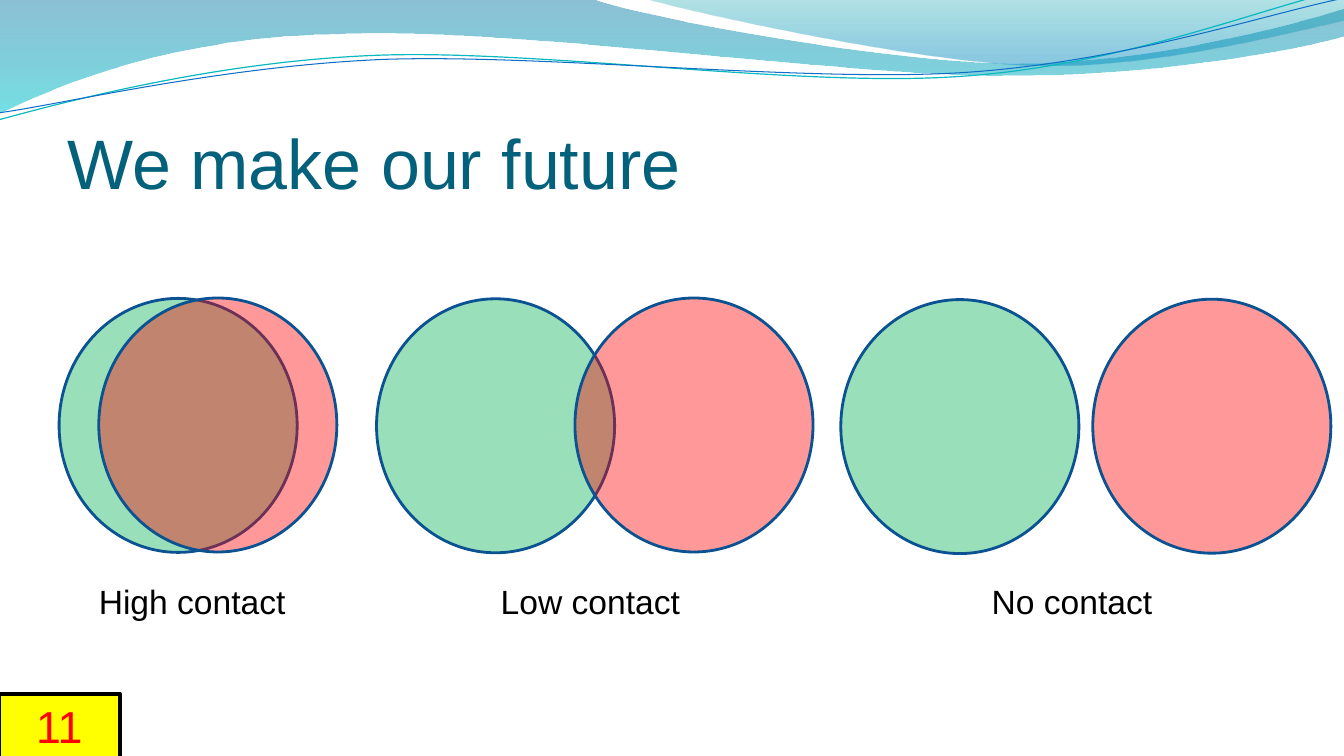
from lxml import etree
from pptx import Presentation
from pptx import util as u
from pptx.dml.color import RGBColor
from pptx.enum import shapes, text
from pptx.oxml.ns import qn

FONT = "Arial"
GREEN, RED, OUTLINE = "00B050", "FF0000", "0B5292"

BACK_WAVE = [
    (0, 0), (14.91, -0.03),
    (16.1, 0.43, 22.48, 1.6, 25.68, 1.6),
    (28.91, 1.6, 32.46, 0.66, 33.86, 0.23),
    (33.91, 0.91),
    (33.3, 1.12, 29.46, 1.93, 25.25, 1.91),
    (21.06, 1.91, 12.93, 0.71, 8.71, 0.86),
    (4.37, 0.91, 1.55, 2.11, -0.03, 2.87),
]
FRONT_WAVE = [
    (16.23, -0.03),
    (17.25, 0.28, 23.09, 1.57, 26.04, 1.65),
    (28.98, 1.75, 32.56, 0.81, 33.86, 0.53),
    (33.86, 0),
]
TEAL_LINE = [
    (-0.03, 3.02),
    (1.63, 2.57, 5.36, 1.57, 9.37, 1.4),
    (13.39, 1.22, 20.07, 2.21, 24.13, 1.93),
    (28.19, 1.68, 31.8, 0.2, 33.81, -0.25),
]
BLUE_LINE = [
    (0, 2.84),
    (1.6, 2.62, 5.54, 1.68, 9.6, 1.5),
    (13.64, 1.35, 20.22, 2.08, 24.26, 1.83),
    (28.32, 1.57, 31.88, 0.36, 33.88, -0.05),
]
CONTACTS = [
    ("High contact", 2.24, (1.49, 7.52), (2.49, 7.51)),
    ("Low contact", 12.37, (9.49, 7.53), (14.49, 7.51)),
    ("No contact", 24.74, (21.19, 7.55), (27.54, 7.54)),
]


def rgb(value):
    return RGBColor.from_string(value)


def box(*lengths):
    return [u.Cm(v) for v in lengths]


def set_alphas(sp, *alphas):
    for clr, alpha in zip(sp._element.spPr.iter(qn("a:srgbClr")), alphas):
        etree.SubElement(clr, qn("a:alpha")).set("val", str(alpha * 1000))


def set_line(sp, color, width):
    sp.line.color.rgb = rgb(color)
    sp.line.width = u.Pt(width)


def bend(sp, segments):
    edges = iter(list(sp._element.spPr.iter(qn("a:lnTo"))))
    for seg in segments[1:]:
        edge = next(edges)
        if len(seg) == 6:
            edge.tag = qn("a:cubicBezTo")
            for _ in range(2):
                extra = next(edges)
                edge.append(extra[0])
                extra.getparent().remove(extra)


def add_curve(s, segments, closed):
    start, *rest = [box(*seg[i:i + 2]) for seg in segments
                    for i in range(0, len(seg), 2)]
    builder = s.shapes.build_freeform(*start)
    builder.add_line_segments(rest, close=closed)
    sp = builder.convert_to_shape()
    sp.shadow.inherit = False
    bend(sp, segments)
    return sp


def add_wave(s, segments, stops):
    sp = add_curve(s, segments, True)
    sp.fill.gradient()
    sp.fill.gradient_angle = 270
    for stop, (position, color, _) in zip(sp.fill.gradient_stops, stops):
        stop.position = position
        stop.color.rgb = rgb(color)
    set_alphas(sp, *(alpha for _, _, alpha in stops))
    sp.line.fill.background()


def add_wave_line(s, segments, color, width):
    sp = add_curve(s, segments, False)
    sp.fill.background()
    set_line(sp, color, width)


def add_preset(s, kind, bounds, fill, line, width):
    sp = s.shapes.add_shape(kind, *box(*bounds))
    sp.shadow.inherit = False
    sp.fill.solid()
    sp.fill.fore_color.rgb = rgb(fill)
    set_line(sp, line, width)
    return sp


def add_circle(s, corner, color):
    sp = add_preset(s, shapes.MSO_SHAPE.OVAL, (*corner, 6, 6.4),
                    color, OUTLINE, 2)
    set_alphas(sp, 40)


def write(tf, content, size, color, align=None):
    tf.word_wrap = True
    p = tf.paragraphs[0]
    p.alignment = align
    r = p.add_run()
    r.text = content
    r.font.name = FONT
    r.font.size = u.Pt(size)
    r.font.color.rgb = rgb(color)


def add_label(s, content, left):
    sp = s.shapes.add_textbox(*box(left, 14.52, 6.27, 1.27))
    sp.text_frame.auto_size = text.MSO_AUTO_SIZE.SHAPE_TO_FIT_TEXT
    write(sp.text_frame, content, 24, "000000")


def add_title(s, content):
    sp = s.shapes.title
    sp._element.getparent().append(sp._element)
    sp.left, sp.top, sp.width, sp.height = box(1.7, 1.96, 30.76, 3.18)
    tf = sp.text_frame
    tf.auto_size = text.MSO_AUTO_SIZE.NONE
    tf.vertical_anchor = text.MSO_ANCHOR.BOTTOM
    tf.margin_left = tf.margin_right = tf.margin_bottom = 0
    tf.margin_top = u.Cm(0.13)
    write(tf, content, 50, "04617B", text.PP_ALIGN.LEFT)


def add_number(s, content):
    sp = add_preset(s, shapes.MSO_SHAPE.RECTANGLE, (-0.03, 17.48, 3.05, 1.63),
                    "FFFF00", "000000", 3)
    sp.text_frame.auto_size = text.MSO_AUTO_SIZE.SHAPE_TO_FIT_TEXT
    sp.text_frame.vertical_anchor = text.MSO_ANCHOR.TOP
    write(sp.text_frame, content, 32, RED, text.PP_ALIGN.CENTER)


def main():
    prs = Presentation()
    prs.slide_width, prs.slide_height = box(33.87, 19.05)
    s = prs.slides.add_slide(prs.slide_layouts[5])
    add_wave(s, BACK_WAVE, [(0, "0074A1", 45), (1, "00C6CF", 55)])
    add_wave(s, FRONT_WAVE, [(0, "00A1A9", 30), (0.8, "008BBF", 45)])
    add_wave_line(s, TEAL_LINE, "0AB8BF", 0.85)
    add_wave_line(s, BLUE_LINE, "0F6FC6", 0.75)
    add_title(s, "We make our future")
    for _, _, green_corner, red_corner in CONTACTS:
        add_circle(s, green_corner, GREEN)
        add_circle(s, red_corner, RED)
    for label, left, _, _ in CONTACTS:
        add_label(s, label, left)
    add_number(s, "11")
    prs.save("out.pptx")


if __name__ == "__main__":
    main()
